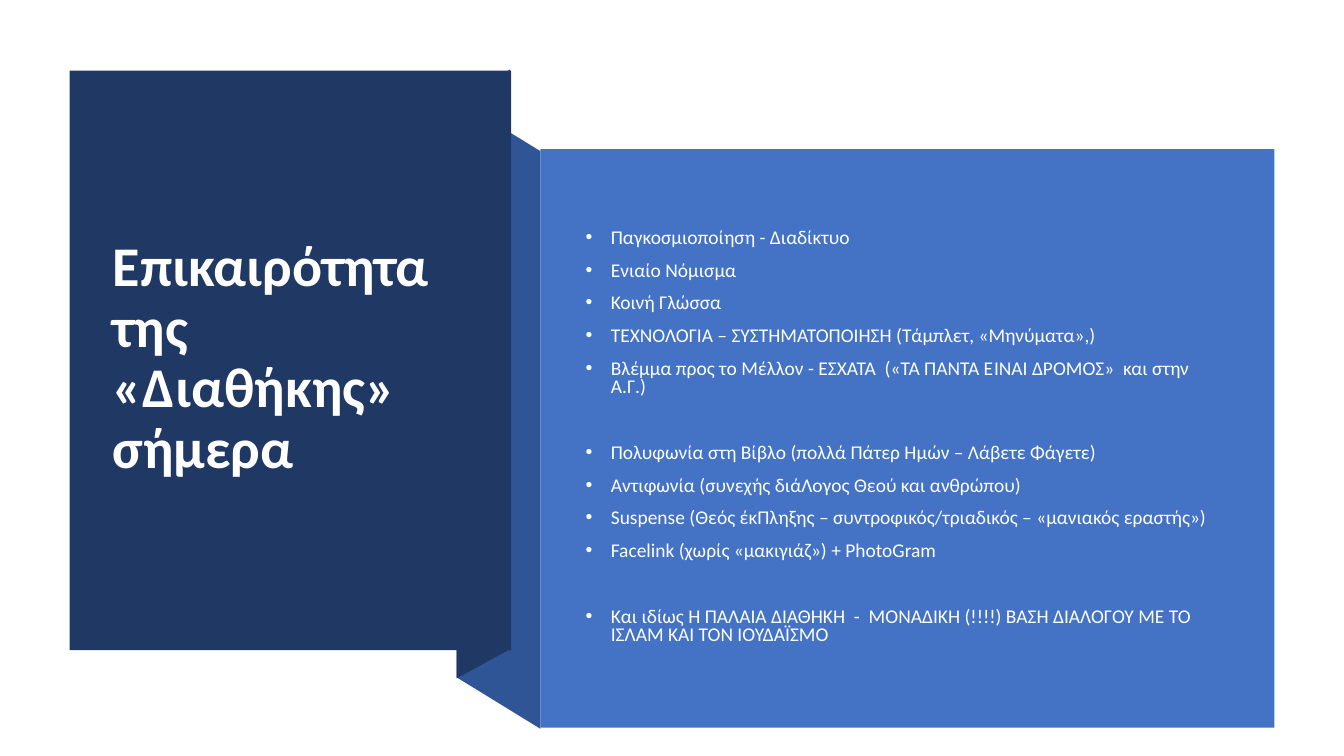
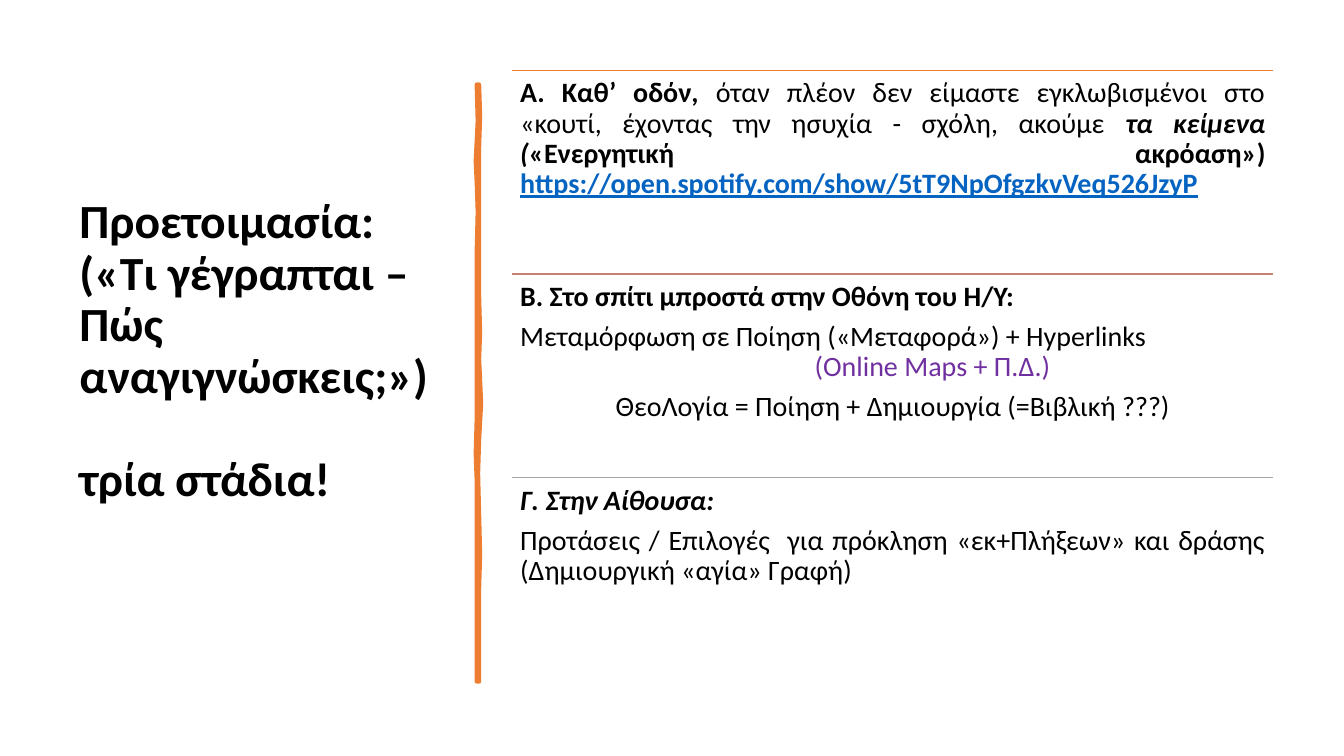
from lxml import etree
from pptx import Presentation
from pptx.dml.color import RGBColor
from pptx.enum.shapes import MSO_CONNECTOR, MSO_SHAPE
from pptx.enum.text import MSO_ANCHOR, PP_ALIGN
from pptx.oxml.ns import qn
from pptx.util import Inches, Pt

LINE, RECT = MSO_CONNECTOR.STRAIGHT, MSO_SHAPE.RECTANGLE
TOP, MID = MSO_ANCHOR.TOP, MSO_ANCHOR.MIDDLE
LEFT, CENTER, FULL = PP_ALIGN.LEFT, PP_ALIGN.CENTER, PP_ALIGN.JUSTIFY
FONT = "Calibri"
HEX = {
    "navy": "203864", "fold": "2F5597", "blue": "4472C4", "white": "FFFFFF",
    "soft": "FEFFFF", "black": "000000", "orange": "ED7D31", "rust": "C48170",
    "gray": "A5A5A5", "link": "0563C1", "purple": "7030A0",
}

# Slide 1 content: groups of bullets
TITLE1 = ["Επικαιρότητα\vτης «Διαθήκης» σήμερα"]
GROUPS = [
    ["Παγκοσμιοποίηση - Διαδίκτυο",
     "Ενιαίο Νόμισμα",
     "Κοινή Γλώσσα",
     "ΤΕΧΝΟΛΟΓΙΑ – ΣΥΣΤΗΜΑΤΟΠΟΙΗΣΗ (Τάμπλετ, «Μηνύματα»,)",
     "Βλέμμα προς το Μέλλον - ΕΣΧΑΤΑ  («ΤΑ ΠΑΝΤΑ ΕΊΝΑΙ ΔΡΟΜΟΣ»  και στην Α.Γ.)"],
    ["Πολυφωνία στη Βίβλο (πολλά Πάτερ Ημών – Λάβετε Φάγετε)",
     "Αντιφωνία (συνεχής διάΛογος Θεού και ανθρώπου)",
     "Suspense (Θεός έκΠληξης – συντροφικός/τριαδικός – «μανιακός εραστής»)",
     "Facelink (χωρίς «μακιγιάζ») + PhotoGram"],
    ["Και ιδίως Η ΠΑΛΑΙΑ ΔΙΑΘΗΚΗ  -  ΜΟΝΑΔΙΚΗ (!!!!) ΒΑΣΗ ΔΙΑΛΟΓΟΥ ΜΕ ΤΟ "
     "ΙΣΛΑΜ ΚΑΙ ΤΟΝ ΙΟΥΔΑΪΣΜΟ"],
]
FOLDS = [
    ("fold", [(5.36, 7.23), (4.53, 6.72), (4.53, 0.99), (5.36, 1.5)]),
    ("navy", [(5.06, 6.44), (4.53, 6.73), (4.53, 0.98), (5.06, 0.69)]),
]

# Slide 2 content: a panel is a rule colour and paragraphs (runs, format)
TITLE2 = ["Προετοιμασία:\v(«Τι γέγραπται – Πώς αναγιγνώσκεις;»)",
          ([("τρία στάδια!", {})], {"before": 37.3})]
BOLD = {"bold": True}
BOTH = {"bold": True, "italic": True}
PANELS = [
    ("orange", [
        ([("Α. Καθ’ οδόν,", BOLD),
          (" όταν πλέον δεν είμαστε εγκλωβισμένοι στο «κουτί, έχοντας την "
           "ησυχία - σχόλη, ακούμε ", {}),
          ("τα κείμενα (", BOTH),
          ("«Ενεργητική ακρόαση») ", BOLD),
          ("https://open.spotify.com/show/5tT9NpOfgzkvVeq526JzyP",
           {"bold": True, "color": "link", "under": True})],
         {"align": FULL})]),
    ("rust", [
        ([("Β. Στο σπίτι μπροστά στην Οθόνη του Η/Υ:", BOLD)], {}),
        ([("Μεταμόρφωση σε Ποίηση («Μεταφορά») + Hyperlinks", {})], {"after": 0}),
        ([("(Online Maps + Π.Δ.)", {"color": "purple"})], {"indent": 2.92}),
        ([("ΘεοΛογία = Ποίηση + Δημιουργία (=Βιβλική ???)", {})],
         {"align": CENTER})]),
    ("gray", [
        ([("Γ. Στην Aίθουσα:", BOTH)], {"align": FULL}),
        ([("Προτάσεις / Επιλογές  για πρόκληση «εκ+Πλήξεων» και δράσης "
           "(Δημιουργική «αγία» Γραφή)", {})], {"align": FULL})]),
]
BRUSH = [
    (4.75, 0.84), (4.76, 1.15), (4.75, 1.46), (4.75, 2.26), (4.75, 2.94),
    (4.76, 3.3), (4.75, 3.56), (4.77, 4.0), (4.75, 4.36), (4.74, 4.7),
    (4.75, 5.1), (4.76, 5.5), (4.75, 5.84), (4.75, 6.76),
    (4.73, 6.76), (4.73, 6.13), (4.73, 5.57), (4.73, 4.77), (4.72, 4.5),
    (4.73, 4.15), (4.73, 3.35), (4.73, 2.5), (4.74, 2.1), (4.73, 1.81),
    (4.72, 1.6), (4.74, 1.2), (4.73, 0.84),
]


def rgb(name):
    return RGBColor.from_string(HEX[name])


def add_text(slide, box, paras, size, color="black", bold=False, spacing=0.9,
             after=0, anchor=TOP, inset=(0.1, 0.05), bullet=False):
    """Write paragraphs, each a string or (runs, format), in a text box."""
    frame = slide.shapes.add_textbox(*map(Inches, box)).text_frame
    frame.word_wrap, frame.vertical_anchor = True, anchor
    frame.margin_left = frame.margin_right = Inches(inset[0])
    frame.margin_top = frame.margin_bottom = Inches(inset[1])
    for i, para in enumerate(paras):
        runs, form = ([(para, {})], {}) if isinstance(para, str) else para
        p = frame.paragraphs[0] if i == 0 else frame.add_paragraph()
        p.alignment = form.get("align", LEFT)
        p.line_spacing = spacing
        p.space_before = Pt(form.get("before", 0))
        p.space_after = Pt(form.get("after", after))
        props = p._p.get_or_add_pPr()
        if bullet:
            props.set("marL", str(Inches(0.25)))
            props.set("indent", str(-Inches(0.25)))
            etree.SubElement(props, qn("a:buFont")).set("typeface", "Arial")
            etree.SubElement(props, qn("a:buChar")).set("char", "•")
        elif "indent" in form:
            props.set("marL", str(Inches(form["indent"])))
        for words, look in runs:
            for j, part in enumerate(words.split("\v")):
                if j:
                    p.add_line_break()
                run = p.add_run()
                run.text = part
                font = run.font
                font.name, font.size = FONT, Pt(size)
                font.bold = look.get("bold", bold)
                font.italic = look.get("italic", False)
                font.underline = look.get("under", False)
                font.color.rgb = rgb(look.get("color", color))


def add_title(slide, box, paras, size, color):
    add_text(slide, box, paras, size, color, bold=True, anchor=MID)


def paint(shape, color, width=0):
    shape.shadow.inherit = False
    shape.fill.solid()
    shape.fill.fore_color.rgb = rgb(color)
    if width:
        shape.line.color.rgb = rgb(color)
        shape.line.width = Pt(width)
    else:
        shape.line.fill.background()


def add_rect(slide, box, color):
    paint(slide.shapes.add_shape(RECT, *map(Inches, box)), color)


def add_outline(slide, points, color, width=0):
    first, *rest = [(Inches(x), Inches(y)) for x, y in points]
    path = slide.shapes.build_freeform(*first)
    path.add_line_segments(rest, close=True)
    paint(path.convert_to_shape(), color, width)


def add_rule(slide, left, right, y, color):
    rule = slide.shapes.add_connector(LINE, *map(Inches, (left, y, right, y)))
    rule.line.color.rgb = rgb(color)
    rule.line.width = Pt(1)
    etree.SubElement(rule._element.spPr, qn("a:effectLst"))


def build_ribbon(slide):
    # Folded ribbon with title
    for color, points in FOLDS:
        add_outline(slide, points, color)
    add_rect(slide, (0.69, 0.7, 4.38, 5.75), "navy")
    add_title(slide, (1.02, 1.07, 3.71, 4.99), TITLE1, 40, "white")
    # Bullets, with a wider gap between groups
    add_rect(slide, (5.36, 1.48, 7.28, 5.74), "blue")
    paras = []
    for group in GROUPS:
        for i, words in enumerate(group):
            gap = 0 if not paras else 10 if i else 33.6
            paras.append(([(words, {})], {"before": gap}))
    add_text(slide, (5.71, 2.23, 6.51, 4.39), paras, 13.9, "soft",
             spacing=0.8, bullet=True)


def build_stages(slide):
    # Title and brush stroke
    add_title(slide, (0.69, 0.7, 3.74, 5.59), TITLE2, 34, "black")
    add_outline(slide, BRUSH, "orange", 3.25)
    # Three stages, each under a rule
    left, top, wide, high = 5.08, 0.7, 7.55, 2.02
    for i, (color, paras) in enumerate(PANELS):
        y = top + i * high
        add_rule(slide, left, left + wide, y, color)
        add_text(slide, (left, y, wide, high), paras, 20, after=7,
                 inset=(0.08, 0.08))


def main():
    deck = Presentation()
    deck.slide_width, deck.slide_height = Inches(13.33), Inches(7.5)
    for build in (build_ribbon, build_stages):
        build(deck.slides.add_slide(deck.slide_layouts[6]))
    deck.save("out.pptx")


if __name__ == "__main__":
    main()
